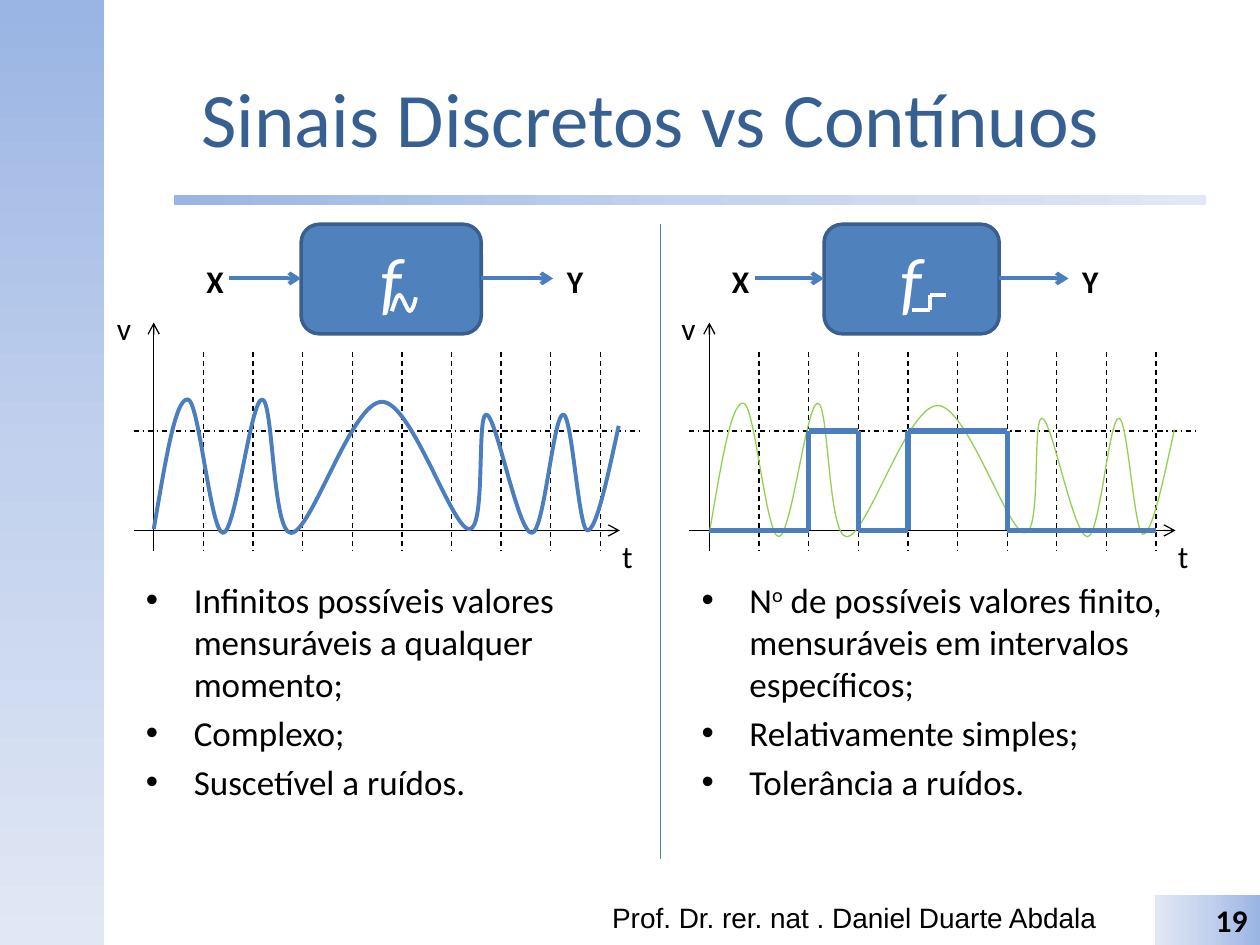
import copy

import lxml.etree
import pptx
import pptx.dml.color
import pptx.enum.dml
import pptx.enum.shapes
import pptx.enum.text
import pptx.oxml.ns
import pptx.util

Inches, Pt = pptx.util.Inches, pptx.util.Pt
qn = pptx.oxml.ns.qn
rgb = pptx.dml.color.RGBColor.from_string
ALIGN = pptx.enum.text.PP_ALIGN
ANCHOR = pptx.enum.text.MSO_ANCHOR
SHAPE = pptx.enum.shapes.MSO_SHAPE
DASH = pptx.enum.dml.MSO_LINE.DASH
DASH_DOT = pptx.enum.dml.MSO_LINE.DASH_DOT

BLUE, BLACK, WHITE = "4B7EBC", "000000", "FFFFFF"

deck = pptx.Presentation()
deck.slide_width, deck.slide_height = Inches(10), Inches(7.5)
slide = deck.slides.add_slide(deck.slide_layouts[6])


def draw_line(x1, y1, x2, y2, color=BLACK, width=0.75, dash=None, arrow=False):
    line = slide.shapes.add_connector(
        pptx.enum.shapes.MSO_CONNECTOR.STRAIGHT,
        Inches(x1), Inches(y1), Inches(x2), Inches(y2))
    line.line.color.rgb = rgb(color)
    line.line.width = Pt(width)
    if dash:
        line.line.dash_style = dash
    if arrow:
        lxml.etree.SubElement(line.line._get_or_add_ln(), qn("a:tailEnd"), type="arrow")
    lxml.etree.SubElement(line._element.spPr, qn("a:effectLst"))


def write_text(shape, text, size, color=BLACK, font="Calibri", bold=False,
               italic=False, align=ALIGN.LEFT, anchor=ANCHOR.TOP, wrap=True):
    frame = shape.text_frame
    frame.word_wrap = wrap
    frame.vertical_anchor = anchor
    paragraph = frame.paragraphs[0]
    paragraph.alignment = align
    run = paragraph.add_run()
    run.text = text
    run.font.size, run.font.name = Pt(size), font
    run.font.bold, run.font.italic = bold, italic
    run.font.color.rgb = rgb(color)


# Gradient bands: side bar, title rule, page number
bands = []
for kind, left, top, width, height, angle in [
        (SHAPE.RECTANGLE, 0, 0, 0.83, 7.5, 270),
        (SHAPE.ROUNDED_RECTANGLE, 1.38, 1.55, 8.19, 0.08, 0),
        (SHAPE.RECTANGLE, 9.17, 7.1, 0.83, 0.4, 180)]:
    band = slide.shapes.add_shape(kind, Inches(left), Inches(top), Inches(width), Inches(height))
    band.shadow.inherit = False
    band.line.fill.background()
    band.fill.gradient()
    band.fill.gradient_angle = angle
    stop_list = band._element.spPr.find(".//" + qn("a:gsLst"))
    stop_list.insert(1, copy.deepcopy(stop_list[0]))
    for stop, position, color in zip(band.fill.gradient_stops, (0, 0.5, 1),
                                     ("9AB5E4", "C2D1ED", "E1E8F5")):
        stop.position = position
        stop.color.rgb = rgb(color)
    bands.append(band)
bands[1].adjustments[0] = 0
write_text(bands[2], "19", 18, bold=True, align=ALIGN.RIGHT)

# Title and footer
title = slide.shapes.add_textbox(Inches(0.83), Inches(0.3), Inches(8.67), Inches(1.25))
write_text(title, "Sinais Discretos vs Contínuos", 44, "376092",
           align=ALIGN.CENTER, anchor=ANCHOR.MIDDLE)
footer = slide.shapes.add_textbox(Inches(4.76), Inches(7.1), Inches(4.19), Inches(0.4))
write_text(footer, "Prof. Dr. rer. nat . Daniel Duarte Abdala", 16, font="Arial")

# Divider between the two halves
draw_line(5.24, 1.78, 5.24, 6.82, BLUE)

# Function blocks with input X and output Y
for block_left, block_width, arrow_length, x_left in [(2.39, 1.43, 0.57, 1.54),
                                                      (6.54, 1.39, 0.55, 5.71)]:
    block_right = block_left + block_width
    block = slide.shapes.add_shape(SHAPE.ROUNDED_RECTANGLE, Inches(block_left), Inches(1.78),
                                   Inches(block_width), Inches(0.87))
    block.shadow.inherit = False
    block.fill.solid()
    block.fill.fore_color.rgb = rgb("4F81BD")
    block.line.color.rgb = rgb("3A5F8C")
    block.line.width = Pt(2)
    write_text(block, "f", 40, WHITE, italic=True, align=ALIGN.CENTER, anchor=ANCHOR.MIDDLE)
    for start in (block_left - arrow_length, block_right):
        draw_line(start, 2.21, start + arrow_length, 2.21, BLUE, 2.25, arrow=True)
    for name, left in (("X", x_left), ("Y", block_right + arrow_length + 0.01)):
        label = slide.shapes.add_textbox(Inches(left), Inches(2.03), Inches(0.3), Inches(0.32))
        write_text(label, name, 18, bold=True, wrap=False)

# Step mark beside the discrete f
for ends in [(7.24, 2.46, 7.38, 2.46), (7.38, 2.34, 7.38, 2.46), (7.38, 2.34, 7.51, 2.34)]:
    draw_line(*ends, WHITE, 2.25)

# Axes, sampling grid and threshold of each plot
STEP = 3.545 / 9
LOW, HIGH = 4.21, 3.42
for origin, v_left in [(1.22, 0.83), (5.63, 5.31)]:
    draw_line(origin - 0.16, LOW, origin + 3.7, LOW, arrow=True)
    draw_line(origin, 4.37, origin, 2.56, arrow=True)
    for tick in range(1, 10):
        draw_line(origin + tick * STEP, 2.79, origin + tick * STEP, 4.37, dash=DASH)
    draw_line(origin - 0.16, HIGH, origin + 3.86, HIGH, dash=DASH_DOT)
    for name, left, top in (("v", v_left, 2.4), ("t", origin + 3.62, 4.21)):
        label = slide.shapes.add_textbox(Inches(left), Inches(top), Inches(0.3), Inches(0.4))
        write_text(label, name, 18, wrap=False)

# Curves: Bézier points, each segment sharing its end with the next
wave_mark = [(3.11, 2.47), (3.13, 2.41), (3.15, 2.34), (3.17, 2.34), (3.19, 2.34),
             (3.23, 2.46), (3.25, 2.47), (3.27, 2.47), (3.29, 2.42), (3.3, 2.36)]
signal = [(1.22, 4.2), (1.31, 3.68), (1.39, 3.16), (1.49, 3.17),
          (1.58, 3.17), (1.67, 4.23), (1.77, 4.23), (1.87, 4.23), (1.99, 3.17), (2.08, 3.17),
          (2.17, 3.17), (2.16, 4.23), (2.31, 4.23), (2.47, 4.23), (2.79, 3.19), (3.03, 3.19),
          (3.26, 3.18), (3.58, 4.18), (3.72, 4.2), (3.86, 4.22), (3.78, 3.29), (3.86, 3.29),
          (3.94, 3.3), (4.11, 4.23), (4.22, 4.23), (4.32, 4.23), (4.39, 3.29), (4.47, 3.29),
          (4.54, 3.29), (4.59, 4.19), (4.66, 4.21), (4.73, 4.22), (4.82, 3.8), (4.91, 3.38)]
sampled_signal = [(x + 4.41, y + 0.03) for x, y in signal]
for wave, color, width in [(wave_mark, WHITE, 2.25), (signal, BLUE, 2.25),
                           (sampled_signal, "92D050", 0.75)]:
    points = [(Inches(x), Inches(y)) for x, y in wave]
    builder = slide.shapes.build_freeform(*points[0])
    builder.add_line_segments(points[3::3], close=False)
    curve = builder.convert_to_shape()
    # Turn each straight segment into a cubic one
    for index, segment in enumerate(list(curve._element.iter(qn("a:lnTo")))):
        segment.clear()
        bezier = lxml.etree.Element(qn("a:cubicBezTo"))
        for x, y in points[3 * index + 1:3 * index + 4]:
            lxml.etree.SubElement(bezier, qn("a:pt"), x=str(x - curve.left), y=str(y - curve.top))
        segment.getparent().replace(segment, bezier)
    curve.shadow.inherit = False
    curve.fill.background()
    curve.line.color.rgb = rgb(color)
    curve.line.width = Pt(width)

# Discrete signal: one level per sampling interval
levels = [LOW, LOW, HIGH, LOW, HIGH, HIGH, LOW, LOW, LOW]
for interval, level in enumerate(levels):
    start = 5.63 + interval * STEP
    draw_line(start, level, start + STEP, level, BLUE, 3)
    if interval and level != levels[interval - 1]:
        draw_line(start, HIGH, start, LOW, BLUE, 3)

# Bullet lists: each item is a list of (text, superscript) runs
for left, width, items in [
        (1.06, 3.7, [[("Infinitos possíveis valores mensuráveis a qualquer momento;", False)],
                     [("Complexo;", False)],
                     [("Suscetível a ruídos.", False)]]),
        (5.47, 4.33, [[("N", False), ("o", True),
                       (" de possíveis valores finito, mensuráveis em intervalos específicos;",
                        False)],
                      [("Relativamente simples;", False)],
                      [("Tolerância a ruídos.", False)]])]:
    remarks = slide.shapes.add_textbox(Inches(left), Inches(4.54), Inches(width), Inches(2.1))
    frame = remarks.text_frame
    frame.word_wrap = True
    for number, item in enumerate(items):
        paragraph = frame.add_paragraph() if number else frame.paragraphs[0]
        paragraph.space_before = Pt(4)
        properties = paragraph._p.get_or_add_pPr()
        properties.set("marL", str(Inches(0.38)))
        properties.set("indent", str(-Inches(0.38)))
        lxml.etree.SubElement(properties, qn("a:buFont"), typeface="Arial")
        lxml.etree.SubElement(properties, qn("a:buChar"), char="•")
        for text, superscript in item:
            run = paragraph.add_run()
            run.text = text
            run.font.size, run.font.name = Pt(20), "Calibri"
            run.font.color.rgb = rgb(BLACK)
            if superscript:
                run.font._element.set("baseline", "30000")

deck.save("out.pptx")
